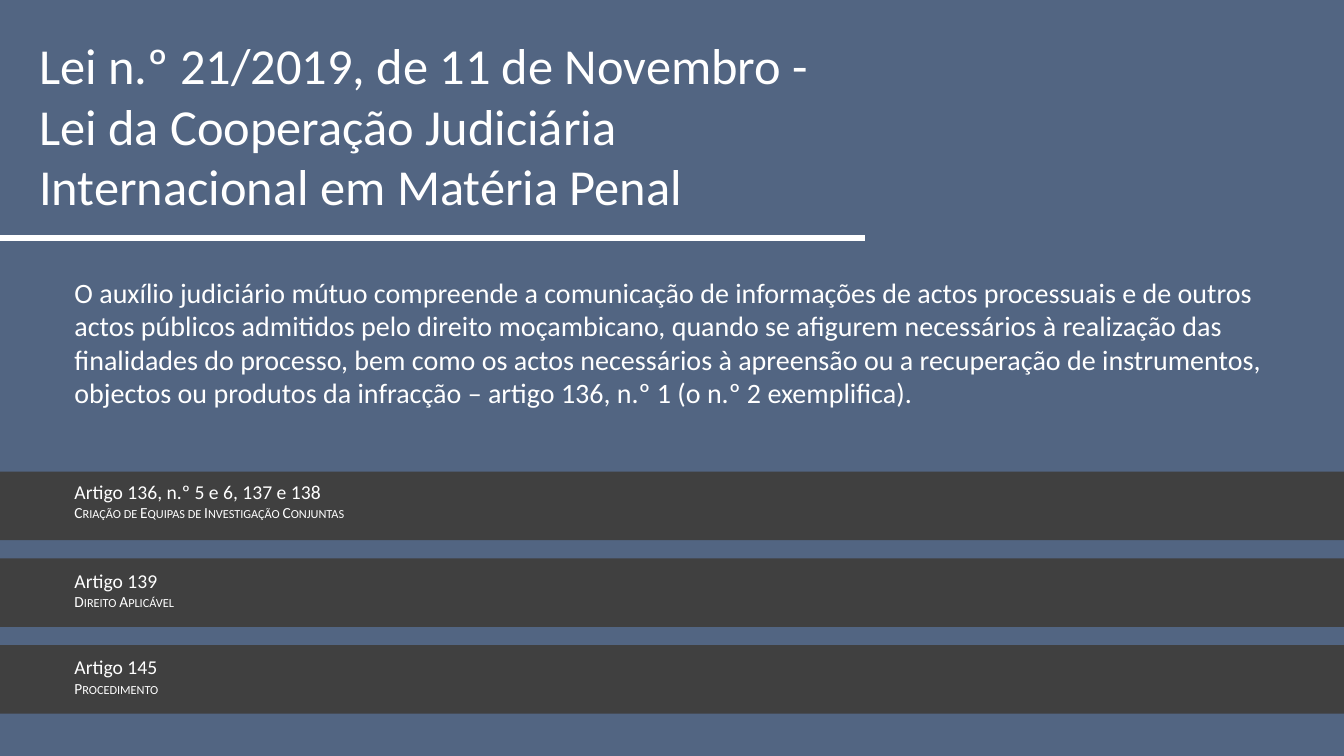
"""Build the slide on Law 21/2019 and its articles on mutual legal assistance."""
from lxml import etree
from pptx import Presentation
from pptx.dml.color import RGBColor
from pptx.enum.shapes import MSO_CONNECTOR as CONNECTOR, MSO_SHAPE as SHAPE
from pptx.enum.text import MSO_ANCHOR as ANCHOR
from pptx.oxml.ns import qn
from pptx.util import Inches, Pt

TITLE = ("Lei n.º 21/2019, de 11 de Novembro - Lei da Cooperação Judiciária "
         "Internacional em Matéria Penal")
SUMMARY = (
    "O auxílio judiciário mútuo compreende a comunicação de informações de "
    "actos processuais e de outros actos públicos admitidos pelo direito "
    "moçambicano, quando se afigurem necessários à realização das finalidades "
    "do processo, bem como os actos necessários à apreensão ou a recuperação "
    "de instrumentos, objectos ou produtos da infracção – artigo 136, n.º 1 "
    "(o n.º 2 exemplifica)."
)
ARTICLES = [
    ("Artigo 136, n.º 5 e 6, 137 e 138",
     "Criação de Equipas de Investigação Conjuntas", 0.03),
    ("Artigo 139", "Direito Aplicável", 0.05),
    ("Artigo 145", "Procedimento", 0.05),
]

FONT = "Calibri"
BLUE = RGBColor(0x52, 0x65, 0x82)
GREY = RGBColor(0x40, 0x40, 0x40)
WHITE = RGBColor(0xFF, 0xFF, 0xFF)
MARGIN = 0.64
BAR_LEFT, BAR_TOP, BAR_W, BAR_H, BAR_PITCH = -0.13, 4.68, 13.54, 0.68, 0.86


def add_text(slide, box, lines):
    tf = slide.shapes.add_textbox(*map(Inches, box)).text_frame
    tf.word_wrap = True
    tf.vertical_anchor = ANCHOR.TOP
    for i, (text, size, small_caps) in enumerate(lines):
        p = tf.paragraphs[0] if i == 0 else tf.add_paragraph()
        r = p.add_run()
        r.text = text
        r.font.name = FONT
        r.font.size = Pt(size)
        r.font.color.rgb = WHITE
        if small_caps:
            r.font._element.set("cap", "small")


def add_rule(slide):
    s = slide.shapes.add_connector(
        CONNECTOR.STRAIGHT, *map(Inches, (-0.12, 2.36, 8.58, 2.36)))
    s.line.color.rgb = WHITE
    s.line.width = Pt(4.5)
    etree.SubElement(s._element.spPr, qn("a:effectLst"))


def add_article(slide, top, heading, subject, inset):
    sp = slide.shapes.add_shape(
        SHAPE.RECTANGLE, *map(Inches, (BAR_LEFT, top, BAR_W, BAR_H)))
    sp.shadow.inherit = False
    sp.fill.solid()
    sp.fill.fore_color.rgb = GREY
    sp.line.fill.background()
    add_text(slide, (MARGIN, top + inset, 11.95, 0.52),
             [(heading, 14, False), (subject, 11, True)])


def main():
    prs = Presentation()
    prs.slide_width, prs.slide_height = Inches(13.33), Inches(7.5)
    slide = prs.slides.add_slide(prs.slide_layouts[6])
    slide.background.fill.solid()
    slide.background.fill.fore_color.rgb = BLUE

    add_text(slide, (0.29, 0.29, 8.4, 1.92), [(TITLE, 36, False)])
    add_rule(slide)
    for i, (heading, subject, inset) in enumerate(ARTICLES):
        add_article(slide, BAR_TOP + i * BAR_PITCH, heading, subject, inset)
    add_text(slide, (MARGIN, 2.68, 12.05, 1.78), [(SUMMARY, 20, False)])
    prs.save("out.pptx")


if __name__ == "__main__":
    main()
